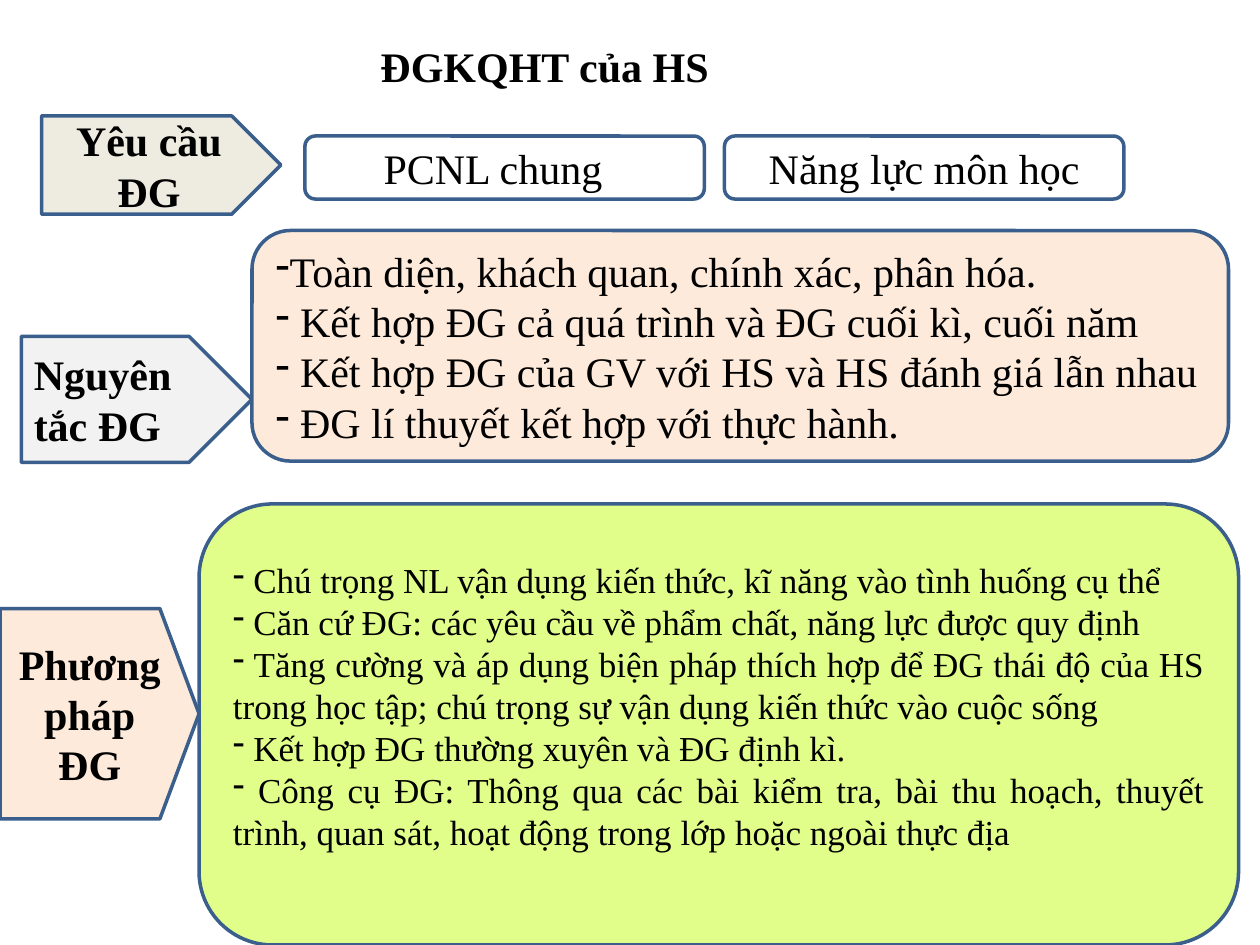
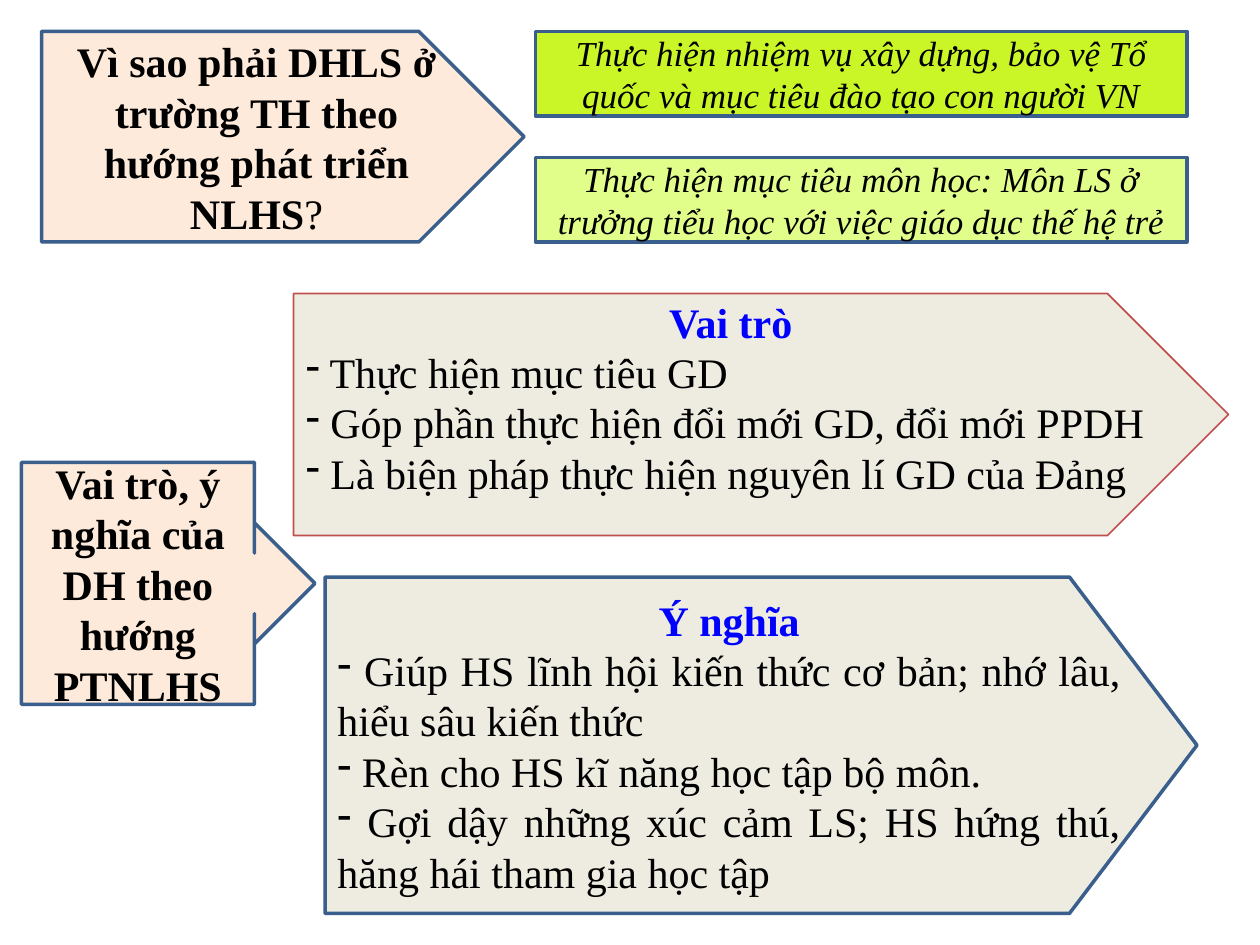
import pptx
import pptx.dml.color
import pptx.enum.shapes
import pptx.enum.text
import pptx.util
from lxml import etree
from pptx.oxml.ns import qn

Inches = pptx.util.Inches
RGBColor = pptx.dml.color.RGBColor
SHAPE = pptx.enum.shapes.MSO_SHAPE
ALIGN = pptx.enum.text.PP_ALIGN

FONT = "Times New Roman"
BLACK = RGBColor(0x00, 0x00, 0x00)
WHITE = RGBColor(0xFF, 0xFF, 0xFF)
HEADING_BLUE = RGBColor(0x00, 0x00, 0xFF)
OUTLINE_BLUE = RGBColor(0x3A, 0x5F, 0x8C)
OUTLINE_RED = RGBColor(0xC0, 0x50, 0x4D)
BEIGE = RGBColor(0xEE, 0xEC, 0xE1)
PALE_GREY = RGBColor(0xF2, 0xF2, 0xF2)
PEACH = RGBColor(0xFD, 0xEA, 0xDA)
LIME = RGBColor(0xCA, 0xF6, 0x28)
PALE_LIME = RGBColor(0xE2, 0xFE, 0x8A)


def add_box(page, kind, left, top, width, height, fill,
            line=OUTLINE_BLUE, line_width=2, adjustments=()):
    box = page.shapes.add_shape(kind, Inches(left), Inches(top), Inches(width), Inches(height))
    box.shadow.inherit = False
    box.fill.solid()
    box.fill.fore_color.rgb = fill
    box.line.color.rgb = line
    box.line.width = pptx.util.Pt(line_width)
    for index, value in enumerate(adjustments):
        box.adjustments[index] = value
    box.text_frame.word_wrap = True
    box.text_frame.vertical_anchor = pptx.enum.text.MSO_ANCHOR.MIDDLE
    return box


def write(box, text, size=24, bold=False, italic=False, color=BLACK,
          align=ALIGN.CENTER, bullet=False, plain_tail=""):
    """Add one paragraph; plain_tail follows the text without bold."""
    frame = box.text_frame
    paragraph = frame.add_paragraph() if frame.text else frame.paragraphs[0]
    paragraph.alignment = align
    if bullet:
        properties = paragraph._p.get_or_add_pPr()
        properties.set("marL", "0")
        properties.set("indent", "0")
        etree.SubElement(properties, qn("a:buChar"), char="-")
    for words, weight in ((text, bold), (plain_tail, False)):
        if words:
            span = paragraph.add_run()
            span.text = words
            span.font.name = FONT
            span.font.size = pptx.util.Pt(size)
            span.font.bold = weight
            span.font.italic = italic
            span.font.color.rgb = color


deck = pptx.Presentation()
deck.slide_width, deck.slide_height = Inches(10), Inches(7.5)
blank = deck.slide_layouts[6]

# Slide 1: assessment of learning results
page = deck.slides.add_slide(blank)
title = page.shapes.add_textbox(Inches(0.33), Inches(0.27), Inches(9.5), Inches(0.55))
title.text_frame.word_wrap = True
title.text_frame.margin_left = Inches(2.69)
write(title, "ĐGKQHT của HS", bold=True, align=ALIGN.LEFT)

# Requirements
requirement = add_box(page, SHAPE.PENTAGON, 0.33, 0.92, 1.9, 0.78, BEIGE)
write(requirement, "Yêu cầu ĐG", bold=True)
general = add_box(page, SHAPE.ROUNDED_RECTANGLE, 2.42, 1.08, 3.17, 0.5, WHITE)
general.text_frame.margin_left = Inches(0.6)
write(general, "PCNL chung", align=ALIGN.JUSTIFY)
subject = add_box(page, SHAPE.ROUNDED_RECTANGLE, 5.75, 1.08, 3.17, 0.5, WHITE)
write(subject, "Năng lực môn học")

# Principles
principle = add_box(page, SHAPE.PENTAGON, 0.17, 2.67, 1.83, 1, PALE_GREY)
write(principle, "Nguyên tắc ĐG", bold=True, align=ALIGN.JUSTIFY)
principles = add_box(page, SHAPE.ROUNDED_RECTANGLE, 2, 1.83, 7.75, 1.83, PEACH)
for text in (
    "Toàn diện, khách quan, chính xác, phân hóa.",
    " Kết hợp ĐG cả quá trình và ĐG cuối kì, cuối năm",
    " Kết hợp ĐG của GV với HS và HS đánh giá lẫn nhau",
    " ĐG lí thuyết kết hợp với thực hành.",
):
    write(principles, text, align=ALIGN.JUSTIFY, bullet=True)

# Methods
method = add_box(page, SHAPE.PENTAGON, 0, 4.83, 1.58, 1.67, PEACH, adjustments=[0.197])
write(method, "Phương pháp ĐG", bold=True)
methods = add_box(page, SHAPE.ROUNDED_RECTANGLE, 1.58, 4, 8.25, 3.5, PALE_LIME)
methods.text_frame.margin_bottom = Inches(0.35)
for text in (
    " Chú trọng NL vận dụng kiến thức, kĩ năng vào tình huống cụ thể",
    " Căn cứ ĐG: các yêu cầu về phẩm chất, năng lực được quy định",
    " Tăng cường và áp dụng biện pháp thích hợp để ĐG thái độ của HS trong học tập; "
    "chú trọng sự vận dụng kiến thức vào cuộc sống",
    " Kết hợp ĐG thường xuyên và ĐG định kì.",
    " Công cụ ĐG: Thông qua các bài kiểm tra, bài thu hoạch, thuyết trình, quan sát, "
    "hoạt động trong lớp hoặc ngoài thực địa",
):
    write(methods, text, size=20, align=ALIGN.JUSTIFY, bullet=True)

# Slide 2: reasons, role and meaning
page = deck.slides.add_slide(blank)
question = add_box(page, SHAPE.PENTAGON, 0.33, 0.25, 3.83, 1.67, PEACH)
write(question, "Vì sao phải DHLS ở trường TH theo hướng phát triển NLHS", bold=True, plain_tail="?")

# Reasons
for kind, top, fill, text in (
    (SHAPE.RECTANGLE, 0.25, LIME,
     "Thực hiện nhiệm vụ xây dựng, bảo vệ Tổ quốc và mục tiêu đào tạo con người VN"),
    (SHAPE.FLOWCHART_PROCESS, 1.25, PALE_LIME,
     "Thực hiện mục tiêu môn học: Môn LS ở trưởng tiểu học với việc giáo dục thế hệ trẻ"),
):
    reason = add_box(page, kind, 4.25, top, 5.17, 0.67, fill)
    write(reason, text, size=20, italic=True)

# Role and meaning
topic = add_box(page, SHAPE.RIGHT_ARROW_CALLOUT, 0.17, 3.67, 2.33, 1.92, PEACH,
                adjustments=[0.25, 0.25, 0.25, 0.809])
write(topic, "Vai trò, ý nghĩa của DH theo hướng PTNLHS", bold=True)

role = add_box(page, SHAPE.PENTAGON, 2.33, 2.33, 7.42, 1.92, BEIGE, OUTLINE_RED, 1)
role.text_frame.margin_top = Inches(0.02)
role.text_frame.margin_bottom = Inches(0.3)
meaning = add_box(page, SHAPE.PENTAGON, 2.58, 4.58, 6.92, 2.67, BEIGE, adjustments=[0.379])
for box, heading, points in (
    (role, "Vai trò", (
        " Thực hiện mục tiêu GD",
        " Góp phần thực hiện đổi mới GD, đổi mới PPDH",
        " Là biện pháp thực hiện nguyên lí GD của Đảng",
    )),
    (meaning, "Ý nghĩa", (
        " Giúp HS lĩnh hội kiến thức cơ bản; nhớ lâu, hiểu sâu kiến thức",
        " Rèn cho HS kĩ năng học tập bộ môn.",
        " Gợi dậy những xúc cảm LS; HS hứng thú, hăng hái tham gia học tập",
    )),
):
    write(box, heading, bold=True, color=HEADING_BLUE)
    for text in points:
        write(box, text, align=ALIGN.JUSTIFY, bullet=True)

deck.save("out.pptx")
